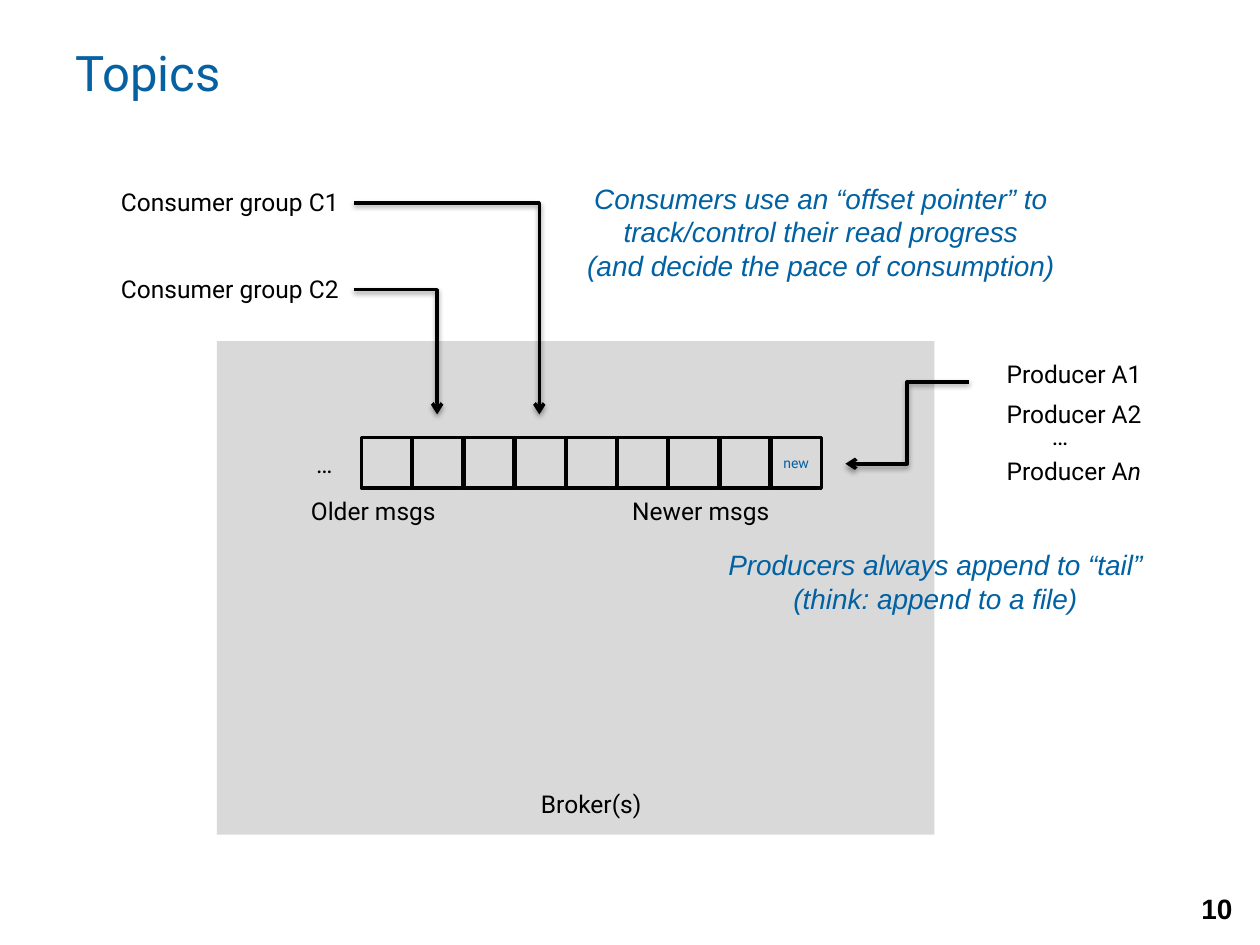
"""Build a slide on how producers and consumers share a topic's message log."""
import pptx
import pptx.dml.color
import pptx.enum.shapes
import pptx.enum.text
import pptx.oxml
import pptx.oxml.ns
import pptx.util

Pt = pptx.util.Pt
ALIGN = pptx.enum.text.PP_ALIGN
ANCHOR = pptx.enum.text.MSO_ANCHOR
RECTANGLE = pptx.enum.shapes.MSO_SHAPE.RECTANGLE
ELBOW = pptx.enum.shapes.MSO_CONNECTOR.ELBOW
COLORS = {"black": "000000", "blue": "0061A3", "title": "0661A3", "gray": "D9D9D9"}
LABEL_HEIGHT = 24.5


def rgb(name):
    """Return the named colour."""
    return pptx.dml.color.RGBColor.from_string(COLORS[name])


def style(paragraph, size, color, font="Roboto", align=ALIGN.LEFT, bold=False, italic=False):
    """Set the alignment and font of a paragraph."""
    paragraph.alignment = align
    paragraph.font.name = font
    paragraph.font.size = Pt(size)
    paragraph.font.bold = bold
    paragraph.font.italic = italic
    paragraph.font.color.rgb = rgb(color)


def add_text(slide, lines, left, top, width, height, size=14, color="black",
             wrap=False, anchor=ANCHOR.TOP, **look):
    """Add a text box with one paragraph for each line."""
    frame = slide.shapes.add_textbox(Pt(left), Pt(top), Pt(width), Pt(height)).text_frame
    frame.word_wrap = wrap
    frame.vertical_anchor = anchor
    frame.text = "\n".join(lines)
    for paragraph in frame.paragraphs:
        style(paragraph, size, color, **look)
    return frame


def add_note(slide, lines, left, top, width, height):
    """Add a centred blue remark in italics."""
    add_text(slide, lines, left, top, width, height, size=16, color="blue",
             font="Arial", align=ALIGN.CENTER, italic=True)


def add_arrow(slide, x1, y1, x2, y2, bends=2):
    """Add a shadowed elbow arrow with one or two bends."""
    arrow = slide.shapes.add_connector(ELBOW, Pt(x1), Pt(y1), Pt(x2), Pt(y2))
    arrow.line.width = Pt(2)
    arrow.line.color.rgb = rgb("black")
    properties = arrow._element.spPr
    properties.find(pptx.oxml.ns.qn("a:prstGeom")).set("prst", f"bentConnector{bends + 1}")
    namespace = pptx.oxml.ns.nsdecls("a")
    arrow.line._get_or_add_ln().append(
        pptx.oxml.parse_xml(f'<a:tailEnd {namespace} type="arrow"/>'))
    properties.append(pptx.oxml.parse_xml(
        f'<a:effectLst {namespace}><a:outerShdw blurRad="{Pt(3.1)}" dist="{Pt(1.6)}" '
        f'dir="5400000" rotWithShape="0"><a:srgbClr val="{COLORS["black"]}">'
        '<a:alpha val="38000"/></a:srgbClr></a:outerShdw></a:effectLst>'))


def add_broker(slide, left, top, width, height):
    """Place the broker area with its caption."""
    broker = slide.shapes.add_shape(RECTANGLE, Pt(left), Pt(top), Pt(width), Pt(height))
    broker.shadow.inherit = False
    broker.fill.solid()
    broker.fill.fore_color.rgb = rgb("gray")
    broker.line.fill.background()
    add_text(slide, ["Broker(s)"], left + 178, top + height - 29.5, 72.7, 22.3)


def add_log(slide, left, top, width, height, count=9):
    """Place the row of messages with its captions below."""
    first, side = left + 36, 28.8
    pitch = (width - 36 - side) / (count - 1)
    for index in range(count):
        message = slide.shapes.add_shape(
            RECTANGLE, Pt(first + index * pitch), Pt(top), Pt(side), Pt(side))
        message.shadow.inherit = False
        message.fill.background()
        message.line.color.rgb = rgb("black")
        message.line.width = Pt(2)
    frame = message.text_frame
    frame.margin_left = frame.margin_right = 0
    frame.vertical_anchor = ANCHOR.MIDDLE
    frame.text = "new"
    style(frame.paragraphs[0], 8, "blue", align=ALIGN.CENTER)
    captions_top = top + height - LABEL_HEIGHT
    add_text(slide, ["…"], left + 3, top + 2.9, 28.8, LABEL_HEIGHT)
    add_text(slide, ["Older msgs"], left, captions_top, 87.1, LABEL_HEIGHT)
    add_text(slide, ["Newer msgs"], left + 183.6, captions_top, 92.9, LABEL_HEIGHT)


def add_producers(slide, left, top, width, height):
    """Place the producers, their arrow to the tail and the remark."""
    names_left = left + 162.7
    for name, offset in (("Producer A1", 0), ("Producer A2", 23)):
        add_text(slide, [name], names_left, top + offset, 92.2, LABEL_HEIGHT)
    add_text(slide, ["…"], left + 188.6, top + 35.3, 28.8, LABEL_HEIGHT)
    last = add_text(slide, ["Producer A"], names_left, top + 55.4, 95, LABEL_HEIGHT)
    variable = last.paragraphs[0].add_run()
    variable.text = "n"
    variable.font.italic = True
    add_arrow(slide, left + 148.3, top + 16.6, left + 77.7, top + 63.4)
    add_note(slide, ["Producers always append to “tail”", "(think: append to a file)"],
             left, top + height - 46, width, 46)


def add_consumers(slide, left, top, width, height):
    """Place the consumer groups, their offset pointers and the remark."""
    label_width, note_left = 141.8, 264.2
    groups = (("Consumer group C1", 3.6, 247.7), ("Consumer group C2", 53.3, 189.3))
    for name, offset, pointer in groups:
        add_text(slide, [name], left, top + offset, label_width, LABEL_HEIGHT,
                 align=ALIGN.CENTER)
        add_arrow(slide, left + label_width, top + offset + LABEL_HEIGHT / 2,
                  left + pointer, top + height, bends=1)
    add_note(slide, ["Consumers use an “offset pointer” to",
                     "track/control their read progress",
                     "(and decide the pace of consumption)"],
             left + note_left, top, width - note_left, 65.5)


def main():
    """Build and save the slide."""
    deck = pptx.Presentation()
    deck.slide_width, deck.slide_height = Pt(720), Pt(540)
    slide = deck.slides.add_slide(deck.slide_layouts[6])
    add_broker(slide, 124, 195, 410, 282)
    add_text(slide, ["Topics"], 36, 19.4, 648, 44, size=28, color="title",
             wrap=True, anchor=ANCHOR.MIDDLE)
    add_log(slide, 170.6, 250, 298.8, 54.5)
    add_producers(slide, 405.4, 201.6, 258.4, 154)
    add_consumers(slide, 60.5, 100, 553, 136.8)
    add_text(slide, ["10"], 660.2, 504, 51.2, 30, size=16, wrap=True,
             anchor=ANCHOR.MIDDLE, font="Arial", align=ALIGN.RIGHT, bold=True)
    deck.save("out.pptx")


if __name__ == "__main__":
    main()
